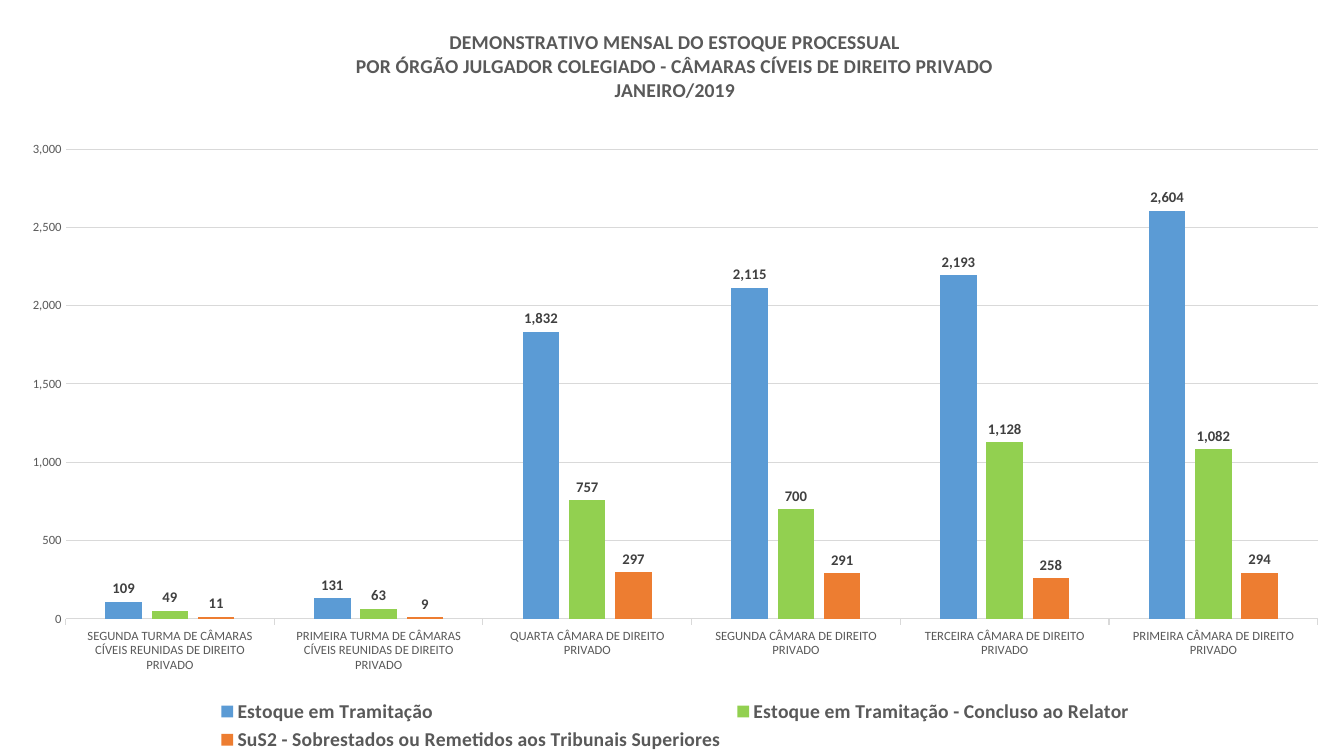
from lxml import etree
from pptx import Presentation
from pptx.chart.data import CategoryChartData
from pptx.dml.color import RGBColor
from pptx.enum.chart import (XL_CHART_TYPE, XL_LABEL_POSITION,
                             XL_LEGEND_POSITION, XL_TICK_MARK)
from pptx.oxml.ns import qn
from pptx.util import Inches, Pt

COLUMN = XL_CHART_TYPE.COLUMN_CLUSTERED
ABOVE = XL_LABEL_POSITION.OUTSIDE_END
BOTTOM = XL_LEGEND_POSITION.BOTTOM
NO_TICK, TICK_OUT = XL_TICK_MARK.NONE, XL_TICK_MARK.OUTSIDE

# Content
TITLE = [
    "DEMONSTRATIVO MENSAL DO ESTOQUE PROCESSUAL",
    "POR ÓRGÃO JULGADOR COLEGIADO - CÂMARAS CÍVEIS DE DIREITO PRIVADO",
    "JANEIRO/2019",
]
COURTS = [
    "SEGUNDA TURMA DE CÂMARAS CÍVEIS REUNIDAS DE DIREITO PRIVADO",
    "PRIMEIRA TURMA DE CÂMARAS CÍVEIS REUNIDAS DE DIREITO PRIVADO",
    "QUARTA CÂMARA DE DIREITO PRIVADO",
    "SEGUNDA CÂMARA DE DIREITO PRIVADO",
    "TERCEIRA CÂMARA DE DIREITO PRIVADO",
    "PRIMEIRA CÂMARA DE DIREITO PRIVADO",
]
STOCK = [
    ("Estoque em Tramitação", "5B9BD5",
     [109, 131, 1832, 2115, 2193, 2604]),
    ("Estoque em Tramitação - Concluso ao Relator", "92D050",
     [49, 63, 757, 700, 1128, 1082]),
    ("SuS2 - Sobrestados ou Remetidos aos Tribunais Superiores", "ED7D31",
     [11, 9, 297, 291, 258, 294]),
]
FACE, GREY, DARK, PALE = "Calibri", "595959", "404040", "D9D9D9"
NUMBER = "#,##0"
WIDE, HIGH = 13.33, 7.5


def paint(color, code):
    color.rgb = RGBColor.from_string(code)


def style(font, size, code, bold=False):
    font.name, font.size, font.bold = FACE, Pt(size), bold
    paint(font.color, code)


def rule(line):
    paint(line.color, PALE)
    line.width = Pt(0.75)


def place(part, index, left, top, width=None, height=None, inner=False):
    """Fix a chart part's place, given in inches from the slide's corner."""
    for old in part.findall(qn("c:layout")):
        part.remove(old)
    layout = etree.Element(qn("c:layout"))
    manual = etree.SubElement(layout, qn("c:manualLayout"))
    items = [("layoutTarget", "inner")] if inner else []
    items += [("xMode", "edge"), ("yMode", "edge"),
              ("x", left / WIDE), ("y", top / HIGH)]
    if width:
        items += [("w", width / WIDE), ("h", height / HIGH)]
    for tag, value in items:
        etree.SubElement(manual, qn("c:" + tag)).set("val", str(value))
    part.insert(index, layout)


# Slide and chart
deck = Presentation()
deck.slide_width, deck.slide_height = Inches(WIDE), Inches(HIGH)
slide = deck.slides.add_slide(deck.slide_layouts[6])

data = CategoryChartData(number_format=NUMBER)
data.categories = COURTS
for name, code, values in STOCK:
    data.add_series(name, values)
chart = slide.shapes.add_chart(
    COLUMN, 0, 0, Inches(WIDE), Inches(HIGH), data).chart
style(chart.font, 10, "000000")

# Title
chart.has_title = True
title = chart.chart_title
title.include_in_layout = False
title.text_frame.text = "\n".join(TITLE)
for para in title.text_frame.paragraphs:
    style(para.font, 14, GREY, True)
place(title._element, 1, 3.5, 0.25)

# Columns and labels
plot = chart.plots[0]
plot.gap_width, plot.overlap, plot.vary_by_categories = 219, -27, False
for series, (name, code, values) in zip(plot.series, STOCK):
    series.format.fill.solid()
    paint(series.format.fill.fore_color, code)
    series.invert_if_negative = False
    labels = series.data_labels
    labels.show_value = True
    labels.position = ABOVE
    labels.number_format, labels.number_format_is_linked = NUMBER, False
    style(labels.font, 10.5, DARK, True)
place(chart._chartSpace.chart.plotArea, 0, 0.65, 1.48, 12.42, 4.66, True)

# Axes
courts, scale = chart.category_axis, chart.value_axis
for axis, tick in ((courts, TICK_OUT), (scale, NO_TICK)):
    style(axis.tick_labels.font, 9, GREY)
    axis.major_tick_mark, axis.minor_tick_mark = tick, NO_TICK
rule(courts.format.line)
scale.format.line.fill.background()
scale.minimum_scale, scale.maximum_scale, scale.major_unit = 0, 3000, 500
scale.tick_labels.number_format = NUMBER
scale.tick_labels.number_format_is_linked = False
rule(scale.major_gridlines.format.line)

# Legend
chart.has_legend = True
legend = chart.legend
legend.position, legend.include_in_layout = BOTTOM, False
style(legend.font, 14, GREY, True)
place(legend._element, 1, 2.1, 6.9, 9.2, 0.6)

deck.save("out.pptx")
